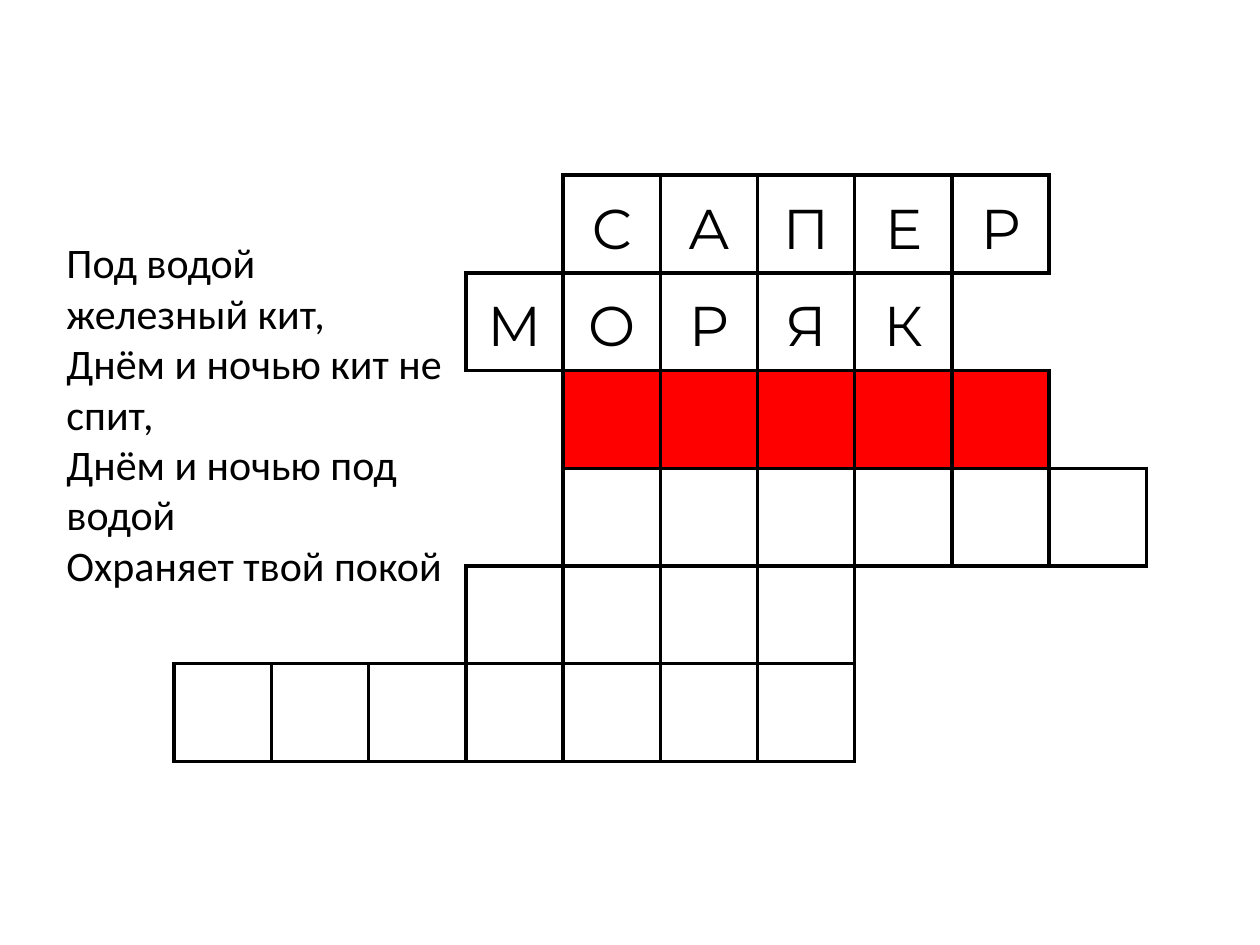
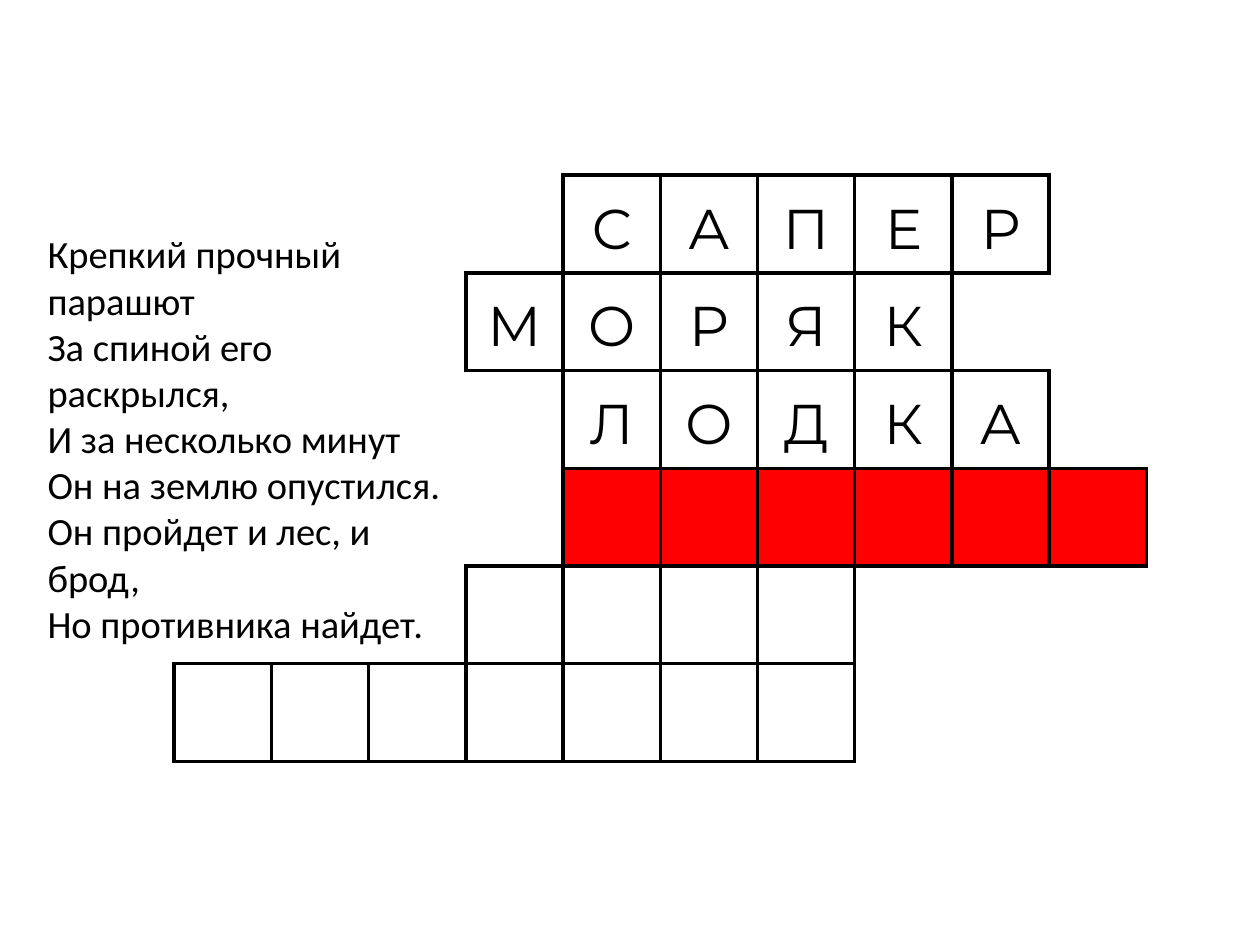
from lxml import etree
from pptx import Presentation
from pptx.dml.color import RGBColor
from pptx.enum.text import MSO_ANCHOR, MSO_AUTO_SIZE, PP_ALIGN
from pptx.oxml.ns import qn
from pptx.util import Cm, Pt

COLORS = {"ink": "000000", "active": "FF0000"}
COLS = 10
CELL_W, CELL_H = Cm(1.96), Cm(1.97)
GRID_X, GRID_Y = Cm(3.51), Cm(3.53)
BORDER = Pt(2.25)

ROWS = [(4, 5), (3, 5), (4, 5), (4, 6), (3, 4), (0, 7)]
ANSWERS = ["САПЕР", "МОРЯК", "ЛОДКА"]

SLIDES = [
    {
        "solved": 2,
        "size": 24,
        "box": (1.09, 4.65, 8.15, 7.44),
        "riddle": [[
            "Под водой железный кит,",
            "Днём и ночью кит не спит,",
            "Днём и ночью под водой",
            "Охраняет твой покой",
        ]],
    },
    {
        "solved": 3,
        "size": 22,
        "box": (0.71, 4.52, 8.61, 8.71),
        "riddle": [
            ["Крепкий прочный парашют"],
            ["За спиной его раскрылся,"],
            ["И за несколько минут"],
            ["Он на землю опустился."],
            ["Он пройдет и лес, и брод,"],
            ["Но противника найдет."],
        ],
    },
]


def rgb(name):
    return RGBColor.from_string(COLORS[name])


def add_run(p, text, font, size):
    r = p.add_run()
    r.text = text
    r.font.name = font
    r.font.size = Pt(size)
    r.font.color.rgb = rgb("ink")


def in_word(row, col):
    if not 0 <= row < len(ROWS):
        return False
    start, length = ROWS[row]
    return start <= col < start + length


def set_borders(cell, row, col):
    tc_pr = cell._tc.get_or_add_tcPr()
    for side, dr, dc in (("L", 0, -1), ("R", 0, 1), ("T", -1, 0), ("B", 1, 0)):
        ln = etree.SubElement(tc_pr, qn(f"a:ln{side}"), w=str(BORDER))
        if in_word(row, col) or in_word(row + dr, col + dc):
            fill = etree.SubElement(ln, qn("a:solidFill"))
            etree.SubElement(fill, qn("a:srgbClr"), val=COLORS["ink"])
        else:
            etree.SubElement(ln, qn("a:noFill"))


def add_crossword(slide, solved):
    frame = slide.shapes.add_table(len(ROWS), COLS, GRID_X, GRID_Y,
                                   CELL_W * COLS, CELL_H * len(ROWS))
    table = frame.table
    table.first_row = table.horz_banding = False
    for column in table.columns:
        column.width = CELL_W
    for i, (start, length) in enumerate(ROWS):
        table.rows[i].height = CELL_H
        for j in range(COLS):
            cell = table.cell(i, j)
            cell.margin_left = cell.margin_right = Cm(0.18)
            cell.margin_top = cell.margin_bottom = 0
            cell.vertical_anchor = MSO_ANCHOR.MIDDLE
            set_borders(cell, i, j)
            if i == solved and in_word(i, j):
                cell.fill.solid()
                cell.fill.fore_color.rgb = rgb("active")
            else:
                cell.fill.background()
            if i < solved and in_word(i, j):
                p = cell.text_frame.paragraphs[0]
                p.alignment = PP_ALIGN.CENTER
                p.line_spacing = 1.15
                add_run(p, ANSWERS[i][j - start], "Montserrat", 32)


def add_riddle(slide, box, riddle, size):
    tf = slide.shapes.add_textbox(*map(Cm, box)).text_frame
    tf.word_wrap = True
    tf.auto_size = MSO_AUTO_SIZE.SHAPE_TO_FIT_TEXT
    for i, lines in enumerate(riddle):
        p = tf.add_paragraph() if i else tf.paragraphs[0]
        for j, line in enumerate(lines):
            if j:
                p.add_line_break()
            add_run(p, line, "Calibri", size)


def main():
    prs = Presentation()
    prs.slide_width, prs.slide_height = Cm(25.4), Cm(19.05)
    for data in SLIDES:
        slide = prs.slides.add_slide(prs.slide_layouts[6])
        add_crossword(slide, data["solved"])
        add_riddle(slide, data["box"], data["riddle"], data["size"])
    prs.save("out.pptx")


if __name__ == "__main__":
    main()
